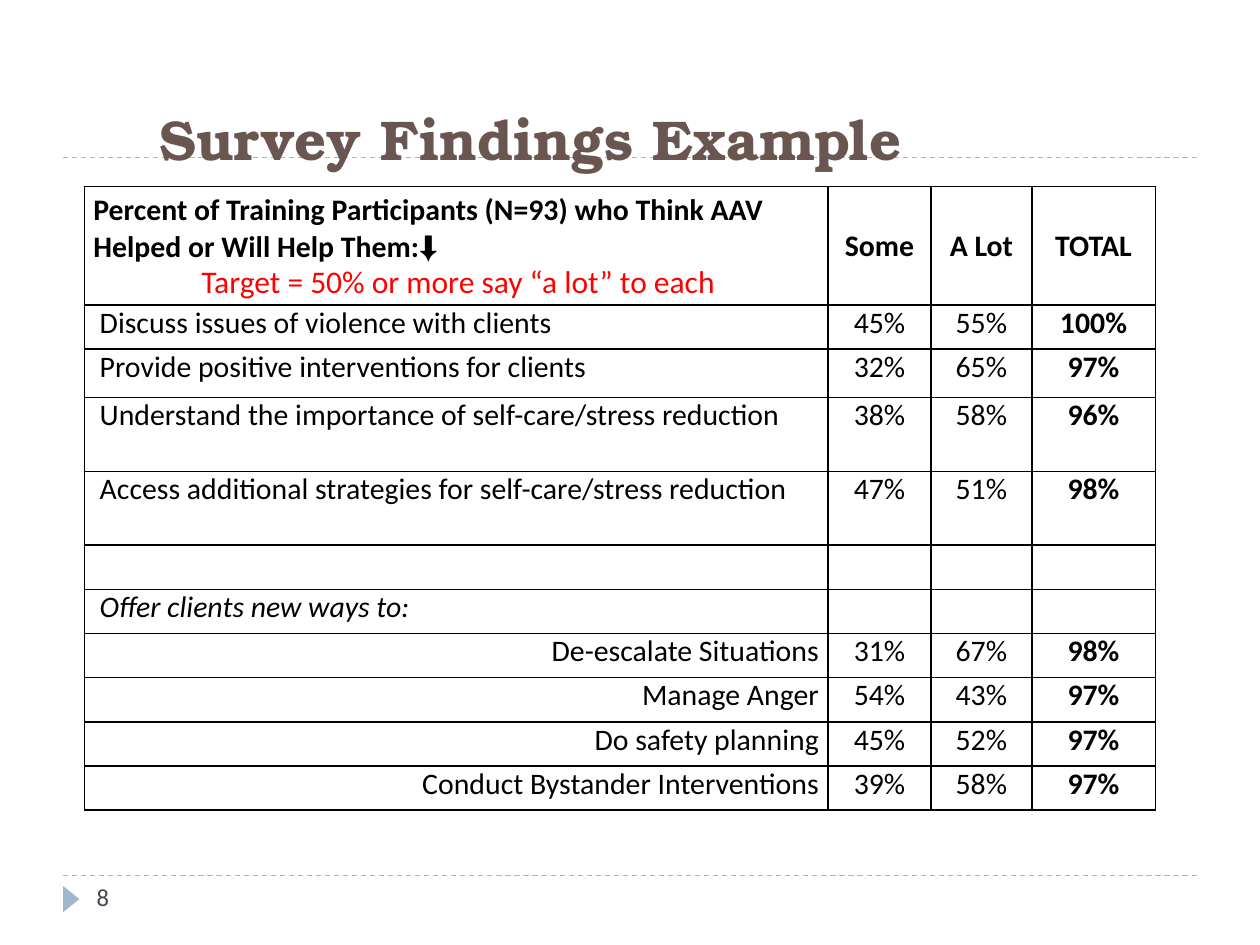
from lxml import etree
from pptx import Presentation
from pptx.dml.color import RGBColor
from pptx.enum.dml import MSO_LINE
from pptx.enum.shapes import MSO_CONNECTOR, MSO_SHAPE
from pptx.enum.text import MSO_ANCHOR, PP_ALIGN
from pptx.oxml.ns import qn
from pptx.util import Cm, Pt

LEFT, CENTER, RIGHT = PP_ALIGN.LEFT, PP_ALIGN.CENTER, PP_ALIGN.RIGHT
TOP, MIDDLE, BOTTOM = MSO_ANCHOR.TOP, MSO_ANCHOR.MIDDLE, MSO_ANCHOR.BOTTOM
STRAIGHT, TRIANGLE = MSO_CONNECTOR.STRAIGHT, MSO_SHAPE.ISOSCELES_TRIANGLE
DASH = MSO_LINE.DASH

COLORS = {
    "title": "6A5650",
    "accent": "9FB8CD",
    "text": "000000",
    "number": "464653",
    "target": "FF0000",
}
HEADER = [
    "Percent of Training Participants (N=93) who Think AAV Helped or Will Help Them:⬇",
    "Some", "A Lot", "TOTAL",
]
FINDINGS = [
    ("Discuss issues of violence with clients", "45%", "55%", "100%"),
    ("Provide positive interventions for clients", "32%", "65%", "97%"),
    ("Understand the importance of self-care/stress reduction", "38%", "58%", "96%"),
    ("Access additional strategies for self-care/stress reduction", "47%", "51%", "98%"),
]
SUBHEAD = "Offer clients new ways to:"
NEW_WAYS = [
    ("De-escalate Situations", "31%", "67%", "98%"),
    ("Manage Anger", "54%", "43%", "97%"),
    ("Do safety planning", "45%", "52%", "97%"),
    ("Conduct Bystander Interventions", "39%", "58%", "97%"),
]
COL_WIDTHS = [14.99, 2.08, 2.03, 2.49]
ROW_HEIGHTS = [2.39, 0.89, 0.97, 1.49, 1.49] + [0.89] * 6


def write(tf, text, size=17, color="text", font="Calibri", bold=False,
          italic=False, align=LEFT):
    p = tf.paragraphs[0]
    p.alignment = align
    r = p.add_run()
    r.text = text
    r.font.size = Pt(size)
    r.font.name = font
    r.font.bold = bold
    r.font.italic = italic
    r.font.color.rgb = RGBColor.from_string(COLORS[color])


class SlideBuilder:
    def __init__(self, prs):
        self.s = prs.slides.add_slide(prs.slide_layouts[5])

    def rule(self, y):
        line = self.s.shapes.add_connector(STRAIGHT, Cm(1.27), Cm(y), Cm(24.13), Cm(y))
        line.line.color.rgb = RGBColor.from_string(COLORS["accent"])
        line.line.width = Pt(0.75)
        line.line.dash_style = DASH
        etree.SubElement(line.element.spPr, qn("a:effectLst"))

    def marker(self, x, y, w, h):
        sp = self.s.shapes.add_shape(TRIANGLE, Cm(x), Cm(y), Cm(w), Cm(h))
        sp.rotation = 90
        sp.shadow.inherit = False
        sp.fill.solid()
        sp.fill.fore_color.rgb = RGBColor.from_string(COLORS["accent"])
        sp.line.fill.background()

    def title(self, text, x, y, w, h):
        sp = self.s.shapes.title
        sp.left, sp.top, sp.width, sp.height = Cm(x), Cm(y), Cm(w), Cm(h)
        sp.text_frame.vertical_anchor = BOTTOM
        write(sp.text_frame, text, 32, "title", "TeX Gyre Bonum", bold=True)
        self.s.shapes.element.append(sp.element)

    def text(self, text, x, y, w, h, **style):
        sp = self.s.shapes.add_textbox(Cm(x), Cm(y), Cm(w), Cm(h))
        sp.text_frame.word_wrap = True
        write(sp.text_frame, text, **style)

    def cell(self, cell, text="", anchor=TOP, indent=0.18, top=0, **style):
        cell.margin_left, cell.margin_right = Cm(indent), Cm(0.18)
        cell.margin_top, cell.margin_bottom = Cm(top), 0
        cell.vertical_anchor = anchor
        tc_pr = cell._tc.get_or_add_tcPr()
        for side in ("lnL", "lnR", "lnT", "lnB"):
            ln = etree.SubElement(tc_pr, qn(f"a:{side}"), w=str(Pt(1)))
            fill = etree.SubElement(ln, qn("a:solidFill"))
            etree.SubElement(fill, qn("a:srgbClr"), val=COLORS["text"])
        cell.fill.background()
        if text:
            write(cell.text_frame, text, **style)

    def table(self, x, y):
        table = self.s.shapes.add_table(
            len(ROW_HEIGHTS), len(COL_WIDTHS), Cm(x), Cm(y),
            Cm(sum(COL_WIDTHS)), Cm(sum(ROW_HEIGHTS))).table
        table.first_row = table.horz_banding = False
        for col, width in zip(table.columns, COL_WIDTHS):
            col.width = Cm(width)
        for row, height in zip(table.rows, ROW_HEIGHTS):
            row.height = Cm(height)

        label = {"indent": 0.31}
        header = {"top": 0.12, "bold": True}
        rows = [(HEADER, header)]
        rows += [(values, label) for values in FINDINGS]
        rows += [([""] * 4, {}), ([SUBHEAD, "", "", ""], {**label, "italic": True})]
        rows += [(values, {"align": RIGHT}) for values in NEW_WAYS]
        for i, (values, first) in enumerate(rows):
            self.cell(table.cell(i, 0), values[0], **first)
            for j in range(1, 4):
                self.cell(table.cell(i, j), values[j], align=CENTER,
                          anchor=MIDDLE if i == 0 else TOP, bold=i == 0 or j == 3)


def main():
    prs = Presentation()
    prs.slide_width, prs.slide_height = Cm(25.4), Cm(19.05)
    slide = SlideBuilder(prs)
    for y in (17.65, 3.18):
        slide.rule(y)
    slide.marker(1.17, 17.96, 0.53, 0.33)
    slide.title("Survey Findings Example", 2.97, 1.47, 21.16, 2.11)
    slide.table(1.7, 3.76)
    slide.text("8", 1.7, 17.65, 5.51, 1.02, size=14, color="number")
    slide.text("Target = 50% or more say “a lot” to each", 3.81, 5.16, 12.9, 1.02,
               size=18, color="target")
    prs.save("out.pptx")


if __name__ == "__main__":
    main()
